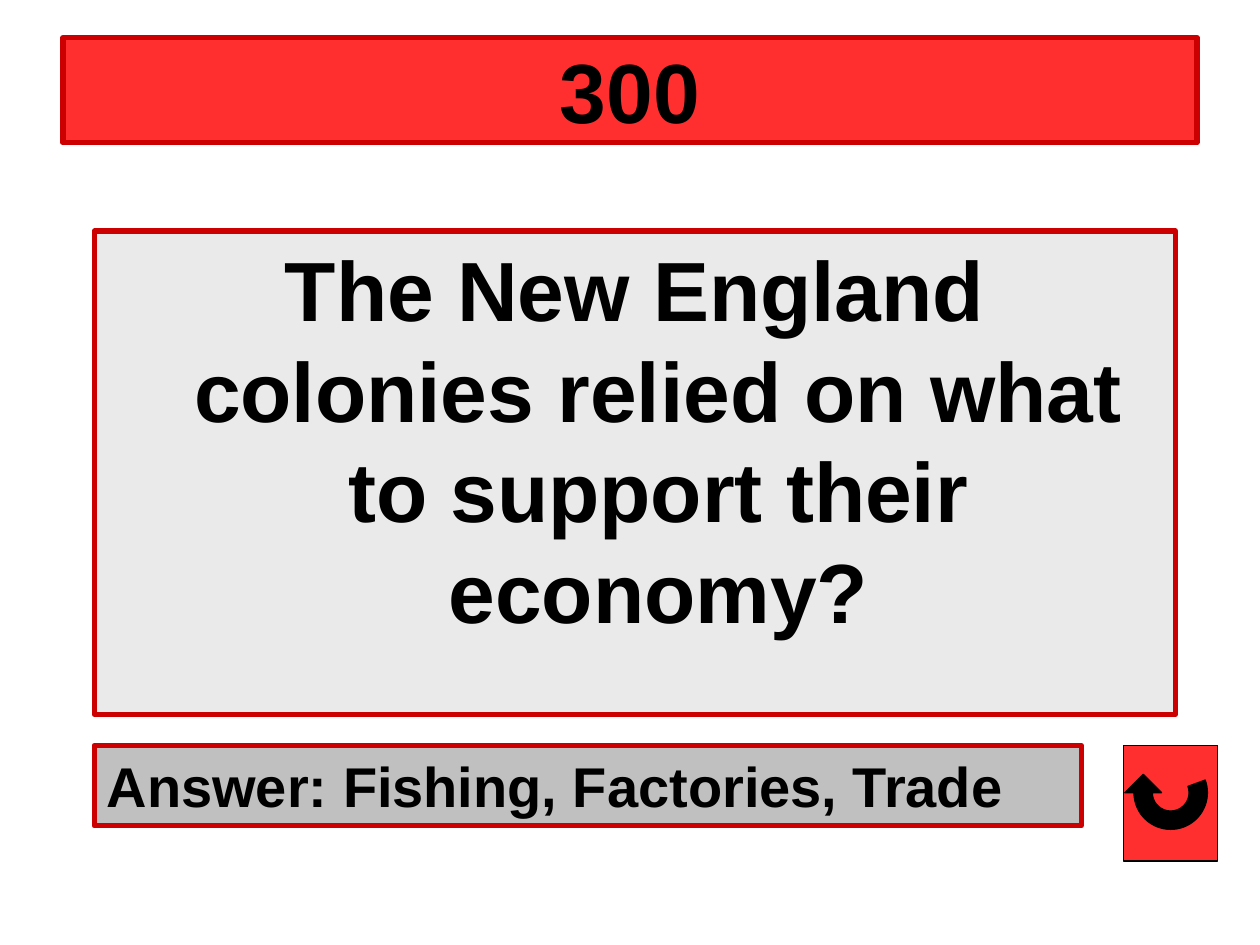
import math

import pptx
import pptx.dml.color
import pptx.enum.shapes
import pptx.enum.text
import pptx.oxml.ns
import pptx.util
from lxml import etree

Cm = pptx.util.Cm
Pt = pptx.util.Pt
Align = pptx.enum.text.PP_ALIGN
Anchor = pptx.enum.text.MSO_ANCHOR


def color(hex_value):
    return pptx.dml.color.RGBColor.from_string(hex_value)


def space_before(para, percent):
    """Set paragraph spacing as a share of the line height."""
    properties = para._p.get_or_add_pPr()
    spacing = etree.SubElement(properties, pptx.oxml.ns.qn("a:spcBef"))
    share = etree.SubElement(spacing, pptx.oxml.ns.qn("a:spcPct"))
    share.set("val", str(percent * 1000))


def hang(para, indent):
    """Indent every line but the first."""
    properties = para._p.get_or_add_pPr()
    properties.set("marL", str(indent))
    properties.set("indent", str(-indent))


def arc(center, radius, start, end, steps=40):
    """Points along an arc, with angles in degrees clockwise from the right."""
    angles = [math.radians(start + (end - start) * i / steps) for i in range(steps + 1)]
    return [(center[0] + radius * math.cos(a), center[1] + radius * math.sin(a))
            for a in angles]


class QuizSlide:
    font = "Arial"
    black = "000000"
    red = "FF2F2F"
    border = "CC0000"

    def __init__(self, deck):
        self.page = deck.slides.add_slide(deck.slide_layouts[6])

    def paint(self, shape, fill, line, width):
        shape.shadow.inherit = False
        shape.fill.solid()
        shape.fill.fore_color.rgb = color(fill)
        shape.line.color.rgb = color(line)
        shape.line.width = Pt(width)

    def rectangle(self, shapes, place, fill, line, width):
        kind = pptx.enum.shapes.MSO_SHAPE.RECTANGLE
        box = shapes.add_shape(kind, *map(Cm, place))
        self.paint(box, fill, line, width)
        return box

    def panel(self, place, fill, text, size, align=Align.CENTER, anchor=Anchor.TOP):
        box = self.rectangle(self.page.shapes, place, fill, self.border, 3)
        frame = box.text_frame
        frame.word_wrap = True
        frame.vertical_anchor = anchor
        para = frame.paragraphs[0]
        para.alignment = align
        span = para.add_run()
        span.text = text
        span.font.name = self.font
        span.font.size = Pt(size)
        span.font.bold = True
        span.font.color.rgb = color(self.black)
        return para

    def return_button(self, place):
        group = self.page.shapes.add_group_shape()
        self.rectangle(group.shapes, place, self.red, self.black, 0.75)
        x, y = center = (23.6, 15.98)
        outer, inner = 0.74, 0.37
        middle = (outer + inner) / 2
        head = [(x - middle - inner, y), (x - middle, y - inner), (x - middle + inner, y)]
        outline = arc(center, inner, 180, -20) + arc(center, outer, -20, 180) + head
        points = [(Cm(px), Cm(py)) for px, py in outline]
        builder = group.shapes.build_freeform(*points[0])
        builder.add_line_segments(points[1:], close=True)
        self.paint(builder.convert_to_shape(), self.black, self.black, 0.75)


def main():
    deck = pptx.Presentation()
    deck.slide_width, deck.slide_height = Cm(25.4), Cm(19.05)
    quiz = QuizSlide(deck)

    question = quiz.panel(
        (1.9, 4.66, 21.8, 9.74), "EAEAEA",
        "The New England colonies relied on what to support their economy?", 48)
    hang(question, Cm(0.95))
    space_before(question, 20)

    answer = quiz.panel((1.9, 15.03, 19.9, 1.62), "C0C0C0",
                        "Answer: Fishing, Factories, Trade", 32, align=Align.LEFT)
    space_before(answer, 50)

    quiz.panel((1.27, 0.76, 22.86, 2.12), quiz.red, "300", 48, anchor=Anchor.MIDDLE)
    quiz.return_button((22.65, 15.03, 1.9, 2.33))

    deck.save("out.pptx")


if __name__ == "__main__":
    main()
